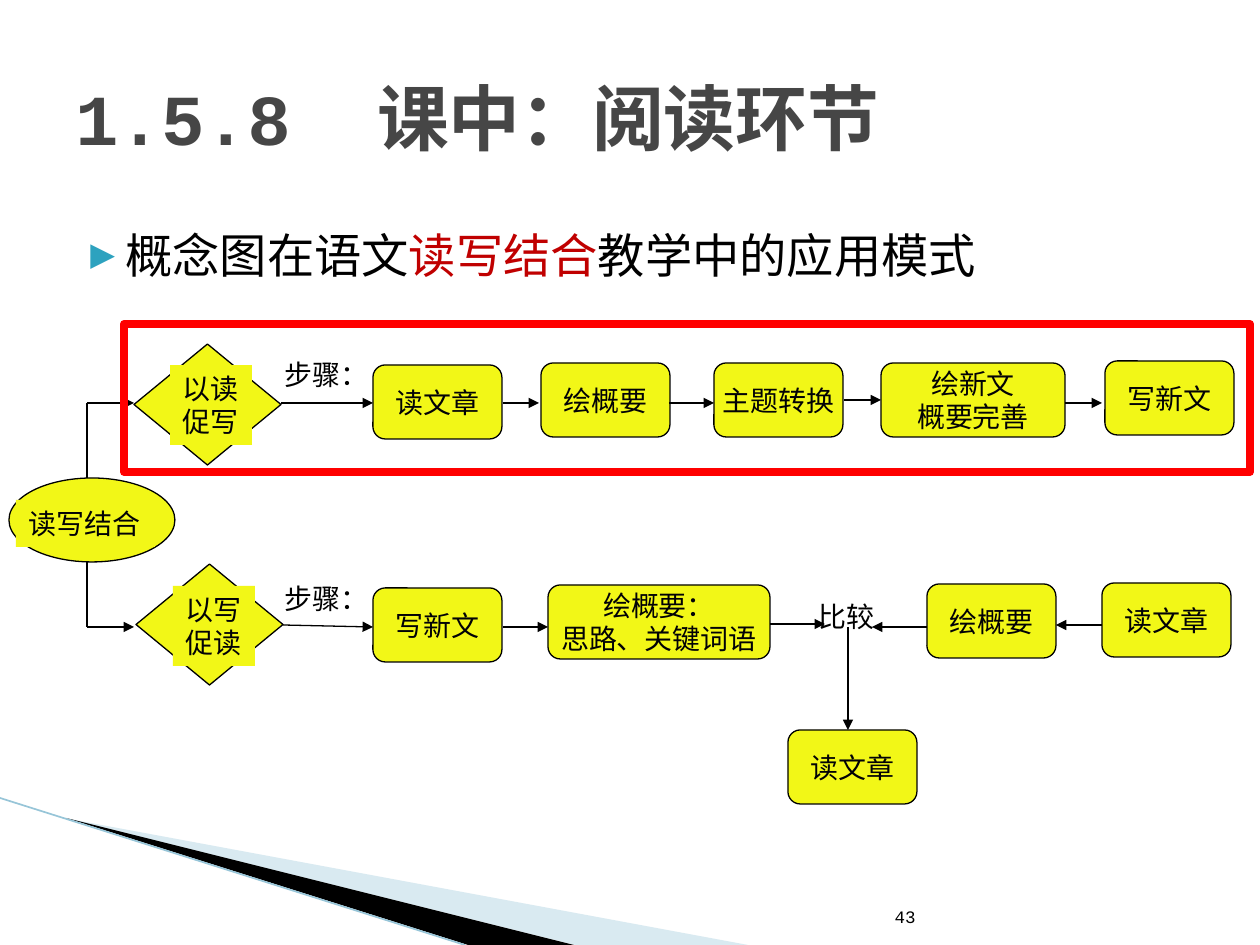
from dataclasses import dataclass

from lxml import etree
from pptx import Presentation
from pptx.dml.color import RGBColor
from pptx.enum.shapes import MSO_CONNECTOR, MSO_SHAPE
from pptx.enum.text import MSO_ANCHOR, PP_ALIGN
from pptx.oxml.ns import qn
from pptx.util import Emu, Pt

PX_PER_INCH = 126
EMU_PER_PX = 914400 / PX_PER_INCH

PROCESS = MSO_SHAPE.FLOWCHART_ALTERNATE_PROCESS
DECISION = MSO_SHAPE.FLOWCHART_DECISION
OVAL = MSO_SHAPE.OVAL
RECTANGLE = MSO_SHAPE.RECTANGLE
STRAIGHT = MSO_CONNECTOR.STRAIGHT
TOP, MIDDLE, BOTTOM = MSO_ANCHOR.TOP, MSO_ANCHOR.MIDDLE, MSO_ANCHOR.BOTTOM
LEFT, CENTER, RIGHT = PP_ALIGN.LEFT, PP_ALIGN.CENTER, PP_ALIGN.RIGHT

MONO, SANS = "Courier New", "DejaVu Sans"
BLACK, YELLOW, INK, RED = "000000", "F2F717", "020206", "FF0000"
GRAY, DARK_RED, TEAL, PALE_TEAL, LINE_TEAL = "464646", "C00000", "2DA2BF", "A0CBDC", "97C5D8"

NODE_WIDTH, NODE_HEIGHT = 129, 74


@dataclass(frozen=True)
class Node:
    left: int
    top: int
    text: str
    width: int = NODE_WIDTH


@dataclass(frozen=True)
class Outline:
    kind: MSO_SHAPE
    left: int
    top: int
    width: int
    height: int


@dataclass(frozen=True)
class Label:
    left: int
    top: int
    width: int
    height: int
    text: str
    filled: bool = True


@dataclass(frozen=True)
class Link:
    start: tuple[int, int]
    end: tuple[int, int]
    arrow: bool = True


@dataclass(frozen=True)
class Wedge:
    points: tuple[tuple[int, int], ...]
    color: str
    opacity: int = 100


WEDGES = [
    Wedge(((69, 819), (748, 945), (575, 945)), PALE_TEAL, 40),
    Wedge(((66, 818), (574, 945), (468, 945)), BLACK),
]
OUTLINES = [
    Outline(DECISION, 134, 344, 147, 121),
    Outline(DECISION, 136, 564, 147, 121),
    Outline(OVAL, 9, 478, 166, 84),
]
LABELS = [
    Label(170, 365, 82, 80, "以读\n促写"),
    Label(173, 586, 82, 80, "以写\n促读"),
    Label(16, 500, 139, 47, "读写结合"),
    Label(272, 351, 110, 47, "步骤：", False),
    Label(272, 575, 110, 47, "步骤：", False),
    Label(806, 593, 82, 47, "比较", False),
]
NODES = [
    Node(373, 365, "读文章"),
    Node(541, 363, "绘概要"),
    Node(714, 363, "主题转换"),
    Node(881, 363, "绘新文\n概要完善", 184),
    Node(1105, 361, "写新文"),
    Node(373, 588, "写新文"),
    Node(548, 585, "绘概要：\n思路、关键词语", 222),
    Node(927, 584, "绘概要"),
    Node(1102, 583, "读文章"),
    Node(788, 730, "读文章"),
]
LINKS = [
    Link((87, 478), (87, 403), False),
    Link((87, 562), (87, 627), False),
    Link((87, 403), (134, 403)),
    Link((87, 627), (134, 627)),
    Link((281, 403), (373, 403)),
    Link((503, 403), (539, 403)),
    Link((669, 403), (714, 403)),
    Link((844, 400), (881, 400)),
    Link((1065, 403), (1102, 403)),
    Link((283, 625), (373, 627)),
    Link((503, 627), (548, 627)),
    Link((770, 624), (825, 624)),
    Link((927, 627), (872, 627)),
    Link((1102, 625), (1056, 625)),
    Link((848, 627), (848, 730)),
]


def px(*lengths: int) -> list[Emu]:
    return [Emu(round(length * EMU_PER_PX)) for length in lengths]


def rgb(color: str) -> RGBColor:
    return RGBColor.from_string(color)


def paint(shape, fill: str | None, line: str | None = None, width: float = 0.75) -> None:
    shape.shadow.inherit = False
    if fill:
        shape.fill.solid()
        shape.fill.fore_color.rgb = rgb(fill)
    else:
        shape.fill.background()
    if line:
        shape.line.color.rgb = rgb(line)
        shape.line.width = Pt(width)
    else:
        shape.line.fill.background()


def set_font(font, color: str, **values) -> None:
    font.color.rgb = rgb(color)
    for name, value in values.items():
        setattr(font, name, value)


def write(shape, text: str, size: int, font: str, color: str, align=LEFT,
          anchor=TOP, wrap: bool = False, bold: bool = False) -> None:
    frame = shape.text_frame
    for name, value in {"text": text, "word_wrap": wrap, "vertical_anchor": anchor}.items():
        setattr(frame, name, value)
    for paragraph in frame.paragraphs:
        paragraph.alignment = align
        for run in paragraph.runs:
            set_font(run.font, color, name=font, size=Pt(size), bold=bold)


def draw_wedge(slide, wedge: Wedge) -> None:
    builder = slide.shapes.build_freeform(*wedge.points[0], scale=EMU_PER_PX)
    builder.add_line_segments(wedge.points[1:])
    shape = builder.convert_to_shape()
    paint(shape, wedge.color)
    if wedge.opacity < 100:
        color = shape.fill._xPr.find(f".//{qn('a:srgbClr')}")
        etree.SubElement(color, qn("a:alpha"), val=str(wedge.opacity * 1000))


def draw_line(slide, link: Link, color: str = BLACK, width: float = 0.75) -> None:
    connector = slide.shapes.add_connector(STRAIGHT, *px(*link.start, *link.end))
    connector.line.color.rgb = rgb(color)
    connector.line.width = Pt(width)
    if link.arrow:
        etree.SubElement(connector.line._get_or_add_ln(), qn("a:tailEnd"), type="triangle")
    etree.SubElement(connector._element.spPr, qn("a:effectLst"))


def draw_outline(slide, outline: Outline) -> None:
    box = px(outline.left, outline.top, outline.width, outline.height)
    paint(slide.shapes.add_shape(outline.kind, *box), YELLOW, BLACK)


def draw_label(slide, label: Label) -> None:
    box = px(label.left, label.top, label.width, label.height)
    if label.filled:
        shape = slide.shapes.add_shape(RECTANGLE, *box)
        paint(shape, YELLOW)
    else:
        shape = slide.shapes.add_textbox(*box)
    write(shape, label.text, 16, SANS, INK if label.filled else BLACK)


def draw_node(slide, node: Node) -> None:
    shape = slide.shapes.add_shape(PROCESS, *px(node.left, node.top, node.width, NODE_HEIGHT))
    paint(shape, YELLOW, BLACK)
    write(shape, node.text, 16, MONO, INK, CENTER, MIDDLE)


def draw_subject(slide) -> None:
    frame = slide.shapes.add_textbox(*px(63, 220, 1172, 80)).text_frame
    frame.word_wrap = True
    paragraph = frame.paragraphs[0]
    properties = paragraph._p.get_or_add_pPr()
    hanging, margin = px(-35, 50)
    properties.set("marL", str(margin))
    properties.set("indent", str(hanging))
    bullet_color = etree.SubElement(properties, qn("a:buClr"))
    etree.SubElement(bullet_color, qn("a:srgbClr"), val=TEAL)
    etree.SubElement(properties, qn("a:buSzPct"), val="68000")
    etree.SubElement(properties, qn("a:buFont"), typeface=SANS)
    etree.SubElement(properties, qn("a:buChar"), char="▶")
    for text, color in (("概念图在语文", BLACK), ("读写结合", DARK_RED), ("教学中的应用模式", BLACK)):
        run = paragraph.add_run()
        run.text = text
        set_font(run.font, color, name=MONO, size=Pt(27))


def main() -> None:
    presentation = Presentation()
    presentation.slide_width, presentation.slide_height = px(1260, 945)
    slide = presentation.slides.add_slide(presentation.slide_layouts[6])
    for wedge in WEDGES:
        draw_wedge(slide, wedge)
    draw_line(slide, Link((0, 798), (465, 945), False), LINE_TEAL, 0.95)
    title = slide.shapes.add_textbox(*px(63, 38, 1134, 157))
    write(title, "1.5.8  课中：阅读环节", 41, MONO, GRAY, anchor=MIDDLE, wrap=True, bold=True)
    draw_subject(slide)
    for draw, items in ((draw_outline, OUTLINES), (draw_label, LABELS),
                        (draw_node, NODES), (draw_line, LINKS)):
        for item in items:
            draw(slide, item)
    paint(slide.shapes.add_shape(RECTANGLE, *px(124, 324, 1126, 148)), None, RED, 4.5)
    page_number = slide.shapes.add_textbox(*px(604, 883, 324, 50))
    write(page_number, "43", 10, MONO, BLACK, RIGHT, BOTTOM, wrap=True)
    presentation.save("out.pptx")


if __name__ == "__main__":
    main()
